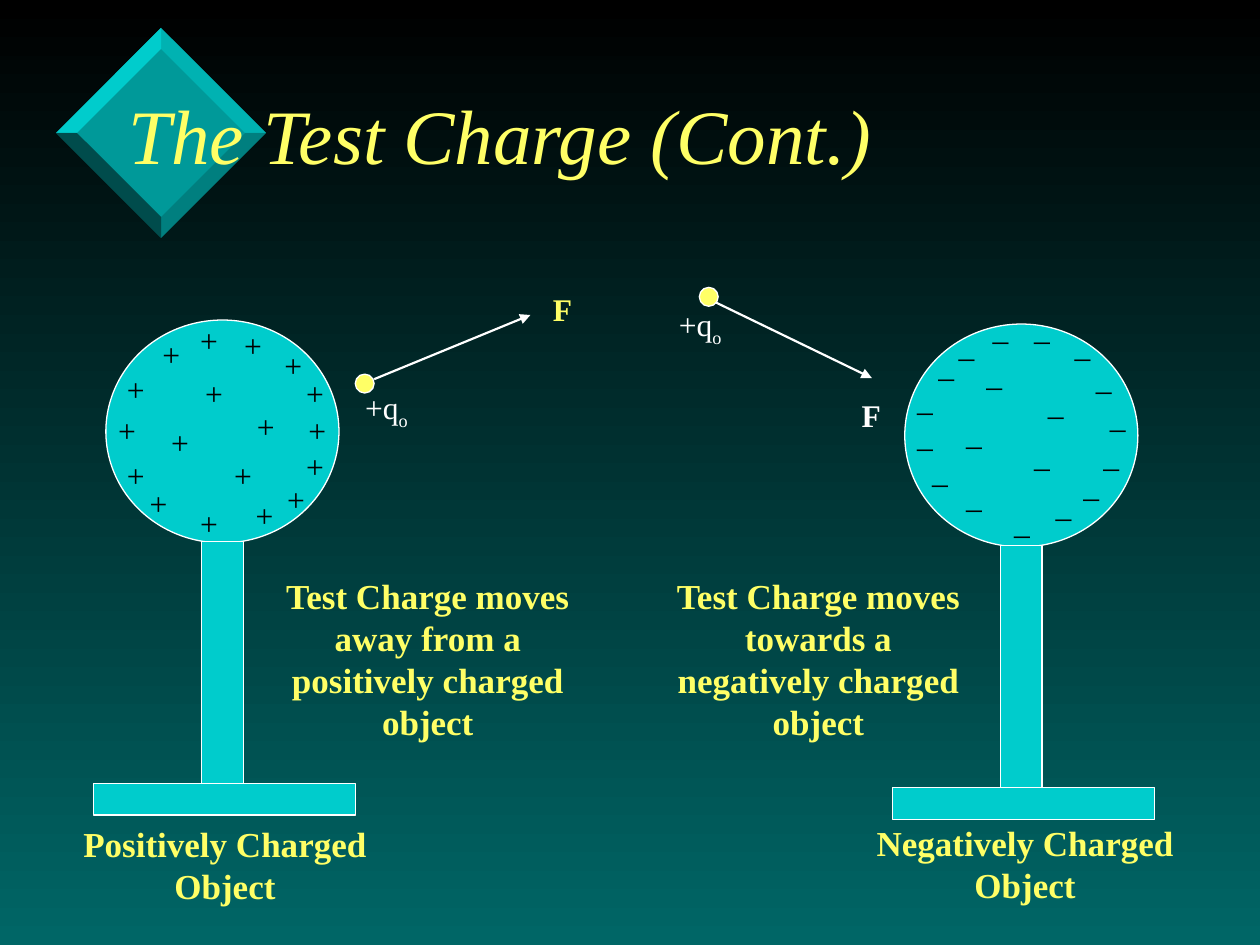
import pptx
import pptx.util
import pptx.dml.color
import pptx.enum.shapes
import pptx.enum.text
import pptx.oxml
import pptx.oxml.ns

Pt = pptx.util.Pt
SHAPE = pptx.enum.shapes.MSO_SHAPE
ALIGN = pptx.enum.text.PP_ALIGN
AUTO_SIZE = pptx.enum.text.MSO_AUTO_SIZE

COLORS = {
    "black": "000000",
    "white": "FFFFFF",
    "yellow": "FFFF66",
    "cyan": "00CCCC",
    "teal": "009999",
    "deep": "006666",
}

PLUS_SPOTS = [
    (132.5, 182.9), (155.5, 194.4), (167.8, 210.2), (169.2, 231.1), (139.7, 229),
    (167.8, 252), (157, 270.7), (126.7, 257), (139, 280.1), (90.7, 238.3),
    (107.3, 284.4), (65.5, 257), (78.5, 272.9), (85.7, 187.9), (110.2, 210.2),
    (107.3, 180), (60.5, 231.1), (65.5, 208.1),
]
MINUS_SPOTS = [
    (583.9, 172.8), (560.2, 172.8), (627.1, 223.2), (540.7, 182.9), (517, 213.8),
    (517, 234), (525.6, 254.9), (619.2, 201.6), (623.5, 245.5), (529.2, 194.4),
    (612, 262.8), (596.2, 274.3), (572.4, 283.7), (545, 269.3), (607, 182.9),
    (556.6, 199.4), (591.8, 216), (545, 233.3), (583.9, 245.5),
]


def rgb(name):
    return pptx.dml.color.RGBColor.from_string(COLORS[name])


class Painter:
    font = "Times New Roman"
    outline = 0.75

    def __init__(self, slide):
        self.slide = slide

    def background(self, top, bottom):
        fill = self.slide.background.fill
        fill.gradient()
        fill.gradient_angle = 270
        for stop, color in zip(fill.gradient_stops, (top, bottom)):
            stop.color.rgb = rgb(color)

    def style(self, paragraph, size, color, bold=False, italic=False):
        font = paragraph.font
        font.name, font.size = self.font, Pt(size)
        font.bold, font.italic = bold, italic
        font.color.rgb = rgb(color)

    def title(self, text, left, top, width, height):
        box = self.slide.shapes.title
        box.left, box.top, box.width, box.height = map(Pt, (left, top, width, height))
        box.element.getparent().append(box.element)
        frame = box.text_frame
        frame.text = text
        frame.auto_size = AUTO_SIZE.NONE
        frame.vertical_anchor = pptx.enum.text.MSO_ANCHOR.MIDDLE
        para = frame.paragraphs[0]
        para.alignment = ALIGN.LEFT
        self.style(para, 44, "yellow", italic=True)

    def polygon(self, points, color, alpha=100):
        builder = self.slide.shapes.build_freeform(*points[0], scale=Pt(1))
        builder.add_line_segments(points[1:], close=True)
        shape = builder.convert_to_shape()
        shape.shadow.inherit = False
        shape.fill.solid()
        shape.fill.fore_color.rgb = rgb(color)
        shape.line.fill.background()
        if alpha < 100:
            tint = shape.element.spPr.find(".//" + pptx.oxml.ns.qn("a:srgbClr"))
            tint.append(pptx.oxml.parse_xml(
                f'<a:alpha {pptx.oxml.ns.nsdecls("a")} val="{alpha * 1000}"/>'))

    def diamond(self, x, y, outer, inner):
        self.polygon([(x, y - outer), (x - outer, y), (x, y + outer), (x + outer, y)], "teal")
        facets = [(1, -1, "cyan", 50), (-1, -1, "cyan", 100),
                  (1, 1, "deep", 50), (-1, 1, "black", 50)]
        for across, down, color, alpha in facets:
            self.polygon([(x, y + down * inner), (x, y + down * outer),
                          (x + across * outer, y), (x + across * inner, y)], color, alpha)

    def shape(self, kind, left, top, width, height, color):
        shape = self.slide.shapes.add_shape(kind, *map(Pt, (left, top, width, height)))
        shape.shadow.inherit = False
        shape.fill.solid()
        shape.fill.fore_color.rgb = rgb(color)
        shape.line.color.rgb = rgb("white")
        shape.line.width = Pt(self.outline)

    def charged_object(self, left, top):
        self.shape(SHAPE.OVAL, left, top, 133.2, 127.4, "cyan")
        self.shape(SHAPE.RECTANGLE, left + 54.7, top + 126.7, 23.8, 138.2, "cyan")
        self.shape(SHAPE.RECTANGLE, left - 7.2, top + 264.9, 149.8, 18, "cyan")

    def text(self, text, left, top, width, height=28.8, size=18, color="black",
             bold=False, subscript=None):
        box = self.slide.shapes.add_textbox(*map(Pt, (left, top, width, height)))
        frame = box.text_frame
        frame.word_wrap = False
        frame.auto_size = AUTO_SIZE.SHAPE_TO_FIT_TEXT
        para = frame.paragraphs[0]
        self.style(para, size, color, bold)
        para.add_run().text = text
        if subscript:
            span = para.add_run()
            span.text = subscript
            span.font._element.set("baseline", "-25000")
        return frame

    def caption(self, text, left, top, height):
        frame = self.text(text, left, top, 187.9, height, 20, "yellow", True)
        frame.word_wrap = True
        frame.paragraphs[0].alignment = ALIGN.CENTER

    def charges(self, sign, spots, width):
        for left, top in spots:
            self.text(sign, left, top, width)

    def arrow(self, start, end):
        line = self.slide.shapes.add_connector(
            pptx.enum.shapes.MSO_CONNECTOR.STRAIGHT, *map(Pt, start + end))
        line.line.color.rgb = rgb("white")
        line.line.width = Pt(1.25)
        names = pptx.oxml.ns.nsdecls("a")
        line.line._get_or_add_ln().append(
            pptx.oxml.parse_xml(f'<a:tailEnd {names} type="triangle"/>'))
        line.element.spPr.append(pptx.oxml.parse_xml(f"<a:effectLst {names}/>"))

    def test_charge(self, ball, label, start, end, force, force_color):
        self.shape(SHAPE.OVAL, *ball, 10.8, 10.8, "yellow")
        self.text("+q", *label, 39.6, color="white", subscript="o")
        self.arrow(start, end)
        self.text("F", *force, 25.2, color=force_color, bold=True)


def main():
    deck = pptx.Presentation()
    deck.slide_width, deck.slide_height = Pt(720), Pt(540)
    painter = Painter(deck.slides.add_slide(deck.slide_layouts[5]))

    painter.background("black", "deep")
    painter.diamond(91.5, 76.5, 60, 48)
    painter.title("The Test Charge (Cont.)", 66.2, 33.1, 612.7, 87.1)

    painter.charged_object(60.5, 182.9)
    painter.charged_object(517, 185.2)
    painter.charges("+", PLUS_SPOTS, 24.5)
    painter.charges("_", MINUS_SPOTS, 23.8)

    painter.test_charge((203, 213.8), (201.6, 218.2), (213.8, 216.7), (303.1, 180),
                        (308.9, 162), "yellow")
    painter.test_charge((399.6, 164.2), (380.9, 170.6), (409, 172.8), (498.2, 216),
                        (485.3, 222.5), "white")

    painter.caption("Positively Charged Object", 34.6, 466.6, 55.4)
    painter.caption("Negatively Charged Object", 491.8, 465.8, 55.4)
    painter.caption("Test Charge moves away from a positively charged object",
                    150.5, 324.7, 103)
    painter.caption("Test Charge moves towards a negatively charged object",
                    373.7, 324.7, 103)

    deck.save("out.pptx")


if __name__ == "__main__":
    main()
